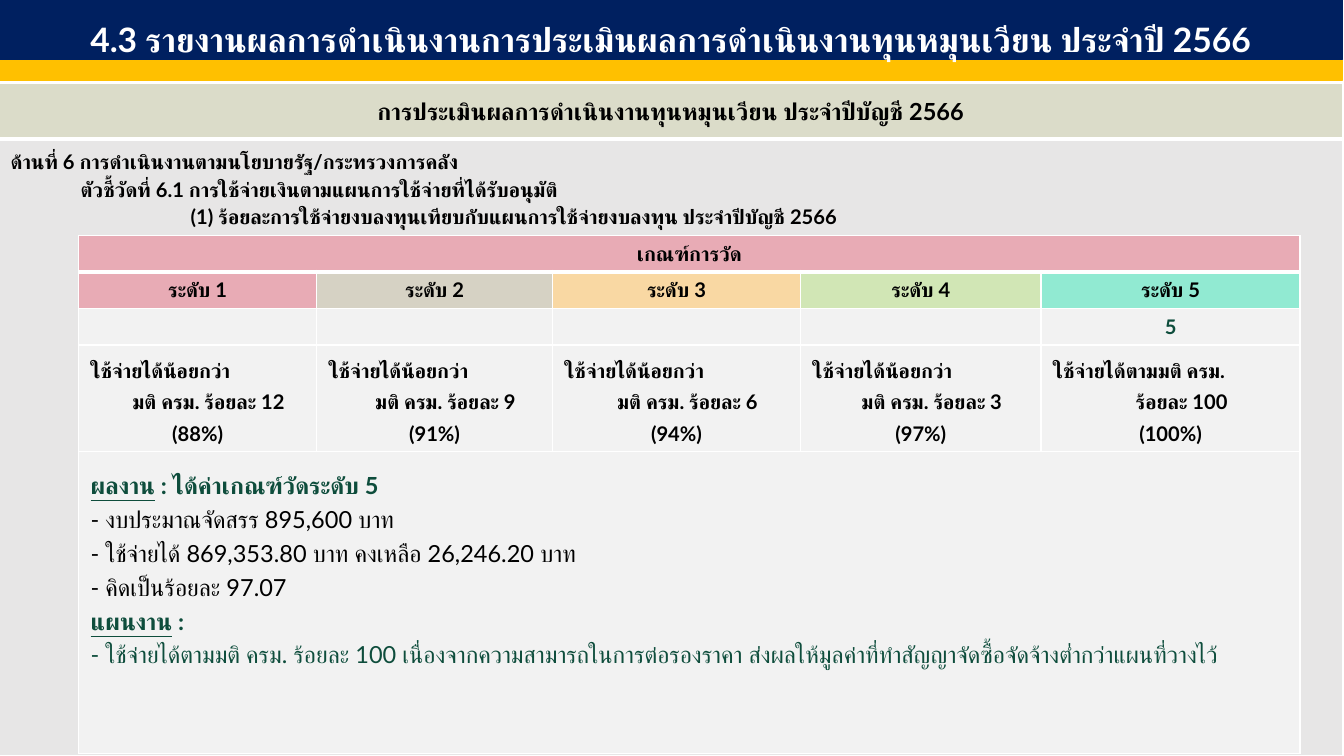
from lxml import etree
from pptx import Presentation
from pptx.dml.color import RGBColor
from pptx.enum.shapes import MSO_SHAPE
from pptx.enum.text import MSO_ANCHOR, MSO_AUTO_SIZE, PP_ALIGN
from pptx.oxml.ns import qn
from pptx.util import Cm, Pt

LEFT, MID = PP_ALIGN.LEFT, PP_ALIGN.CENTER
CENTRE = MSO_ANCHOR.MIDDLE
RECT = MSO_SHAPE.RECTANGLE
FIXED = MSO_AUTO_SIZE.NONE
FONT = "Lato"
HEX = {
    "navy": "002060", "gold": "FFC000", "white": "FFFFFF", "black": "000000",
    "sage": "DBDCC9", "grey": "E7E6E6", "pale": "F2F2F2", "green": "0E4D3C",
    "pink": "E8ABB5", "stone": "D6D2C4", "sand": "F9D8A3", "lime": "D1E6B5",
    "mint": "91EAD2",
}

TITLE = "4.3 รายงานผลการดำเนินงานการประเมินผลการดำเนินงานทุนหมุนเวียน ประจำปี 2566"
HEAD = "การประเมินผลการดำเนินงานทุนหมุนเวียน ประจำปีบัญชี 2566"
# Topic lines: text, indent in cm
TOPICS = [
    ("ด้านที่ 6 การดำเนินงานตามนโยบายรัฐ/กระทรวงการคลัง", 0),
    ("ตัวชี้วัดที่ 6.1 การใช้จ่ายเงินตามแผนการใช้จ่ายที่ได้รับอนุมัติ", 1.47),
    ("(1) ร้อยละการใช้จ่ายงบลงทุนเทียบกับแผนการใช้จ่ายงบลงทุน ประจำปีบัญชี 2566", 3.78),
]
# Levels: colour, opacity of the heading, opacity of the rule, rule lines
LESS = "ใช้จ่ายได้น้อยกว่า"
LEVELS = [
    ("pink", 60, 80, LESS, "มติ ครม. ร้อยละ 12", "(88%)"),
    ("stone", 96, 80, LESS, "มติ ครม. ร้อยละ 9", "(91%)"),
    ("sand", 60, 100, LESS, "มติ ครม. ร้อยละ 6", "(94%)"),
    ("lime", 60, 80, LESS, "มติ ครม. ร้อยละ 3", "(97%)"),
    ("mint", 60, 70, "ใช้จ่ายได้ตามมติ ครม.", "ร้อยละ 100", "(100%)"),
]
# Results: underlined head, rest, colour, bold
RESULTS = [
    ("ผลงาน", " : ได้ค่าเกณฑ์วัดระดับ 5", "green", True),
    ("", "- งบประมาณจัดสรร 895,600 บาท", "black", False),
    ("", "- ใช้จ่ายได้ 869,353.80 บาท คงเหลือ 26,246.20 บาท", "black", False),
    ("", "- คิดเป็นร้อยละ 97.07", "black", False),
    ("แผนงาน", " :", "green", True),
    ("", "- ใช้จ่ายได้ตามมติ ครม. ร้อยละ 100 เนื่องจากความสามารถในการต่อรองราคา "
         "ส่งผลให้มูลค่าที่ทำสัญญาจัดซื้อจัดจ้างต่ำกว่าแผนที่วางไว้", "green", False),
]


def tint(name):
    return RGBColor.from_string(HEX[name])


def style(para, size=12, color="black", bold=True, align=MID, gap=1.0, indent=0):
    para.alignment = align
    para.line_spacing = gap
    if indent:
        para._p.get_or_add_pPr().set("marL", str(Cm(indent)))
    for run in para.runs:
        font = run.font
        font.name, font.size, font.bold = FONT, Pt(size), bold
        font.color.rgb = tint(color)
        etree.SubElement(run._r.get_or_add_rPr(), qn("a:cs"), typeface=FONT)


def lines(frame, texts):
    """Fill a frame with one paragraph per text."""
    frame.text = "\n".join(texts)
    return frame.paragraphs


def paint(cell, color, alpha=100):
    cell.fill.solid()
    cell.fill.fore_color.rgb = tint(color)
    if alpha < 100:
        tone = cell._tc.tcPr.find(".//" + qn("a:srgbClr"))
        etree.SubElement(tone, qn("a:alpha"), val=str(alpha * 1000))


def edge(cell, row):
    """White borders, thick between the first two rows."""
    widths = {"L": 1, "R": 1, "T": 3 if row == 1 else 1, "B": 3 if row == 0 else 1}
    for spot, (side, width) in enumerate(widths.items()):
        line = etree.Element(qn("a:ln" + side), w=str(Pt(width)))
        fill = etree.SubElement(line, qn("a:solidFill"))
        etree.SubElement(fill, qn("a:srgbClr"), val=HEX["white"])
        cell._tc.get_or_add_tcPr().insert(spot, line)


def grid(slide, box, cols, rows):
    """Add a plain table with bordered, small-type cells."""
    table = slide.shapes.add_table(len(rows), len(cols), *map(Cm, box)).table
    table.first_row = table.horz_banding = False
    for col, width in zip(table.columns, cols):
        col.width = Cm(width)
    for row, height in zip(table.rows, rows):
        row.height = Cm(height)
    for num, row in enumerate(table.rows):
        for cell in row.cells:
            paint(cell, "pale")
            edge(cell, num)
            para = cell.text_frame.paragraphs[0]._p
            etree.SubElement(para, qn("a:endParaRPr"), sz="1200")
    return table


def banner(slide, box):
    """Navy title band with a gold bar below."""
    left, top, width, height = box
    bar = slide.shapes.add_shape(RECT, Cm(left), Cm(top + height + 0.02), Cm(width), Cm(0.41))
    title = slide.shapes.title
    title.left, title.top, title.width, title.height = map(Cm, box)
    for shape, color in ((bar, "gold"), (title, "navy")):
        shape.fill.solid()
        shape.fill.fore_color.rgb = shape.line.color.rgb = tint(color)
        shape.line.width = Pt(1)
    bar.shadow.inherit = False
    frame = title.text_frame
    frame.text = TITLE
    frame.word_wrap, frame.auto_size = True, FIXED
    frame.vertical_anchor = CENTRE
    style(frame.paragraphs[0], 20, "white", gap=1.5)
    slide.shapes._spTree.append(title._element)  # title above the bar


def panel(slide, box):
    """Heading row and the grey body with its topic lines."""
    width, height = box[2:]
    table = grid(slide, box, [width], [1.17, height - 1.17])
    head, body = table.cell(0, 0), table.cell(1, 0)
    for cell, color in ((head, "sage"), (body, "grey")):
        paint(cell, color)
        cell.margin_top = cell.margin_bottom = Cm(0.18)
    head.vertical_anchor = CENTRE
    head.text_frame.text = HEAD
    style(head.text_frame.paragraphs[0], 14)
    texts = [text for text, _ in TOPICS]
    for para, (_, indent) in zip(lines(body.text_frame, texts), TOPICS):
        style(para, align=LEFT, gap=1.1, indent=indent)
        para.space_after = Pt(0.5)


def scale(slide, box):
    """Criteria table: levels, score, rules and results."""
    table = grid(slide, box, [5, 4.95, 5.21, 5.05, 5.44], [0.74, 0.74, 0.74, 2.13, 6.35])
    for row in (0, 4):
        table.cell(row, 0).merge(table.cell(row, 4))

    # Heading
    top = table.cell(0, 0)
    paint(top, "pink", 70)
    top.text_frame.text = "เกณฑ์การวัด"
    style(top.text_frame.paragraphs[0])

    # Levels and their rules
    for col, (color, alpha, fade, *rule) in enumerate(LEVELS):
        name, cell = table.cell(1, col), table.cell(3, col)
        paint(name, color, alpha)
        name.text_frame.text = f"ระดับ {col + 1}"
        style(name.text_frame.paragraphs[0])
        paint(cell, "pale", fade)
        first, second, third = lines(cell.text_frame, rule)
        style(first, align=LEFT, gap=1.3)
        style(second, gap=1.3, indent=0.46)
        style(third, gap=1.3)

    # Score
    score = table.cell(2, 4)
    score.vertical_anchor = CENTRE
    score.text_frame.text = "5"
    style(score.text_frame.paragraphs[0], color="green")

    # Results
    cell = table.cell(4, 0)
    paint(cell, "pale", 80)
    texts = [head or rest for head, rest, _, _ in RESULTS]
    paras = lines(cell.text_frame, texts)
    for num, (para, (head, rest, color, bold)) in enumerate(zip(paras, RESULTS)):
        if head:
            para.runs[0].font.underline = True
            para.add_run().text = rest
        style(para, 14, color, bold, LEFT, 1.2 if num else 1.5)


def main():
    deck = Presentation()
    deck.slide_width, deck.slide_height = Cm(28.22), Cm(15.88)
    slide = deck.slides.add_slide(deck.slide_layouts[5])
    banner(slide, (-0.03, -0.05, 28.22, 1.3))
    panel(slide, (-0.03, 1.75, 28.22, 14.12))
    scale(slide, (1.65, 4.95, 25.65, 10.7))
    deck.save("out.pptx")


if __name__ == "__main__":
    main()
